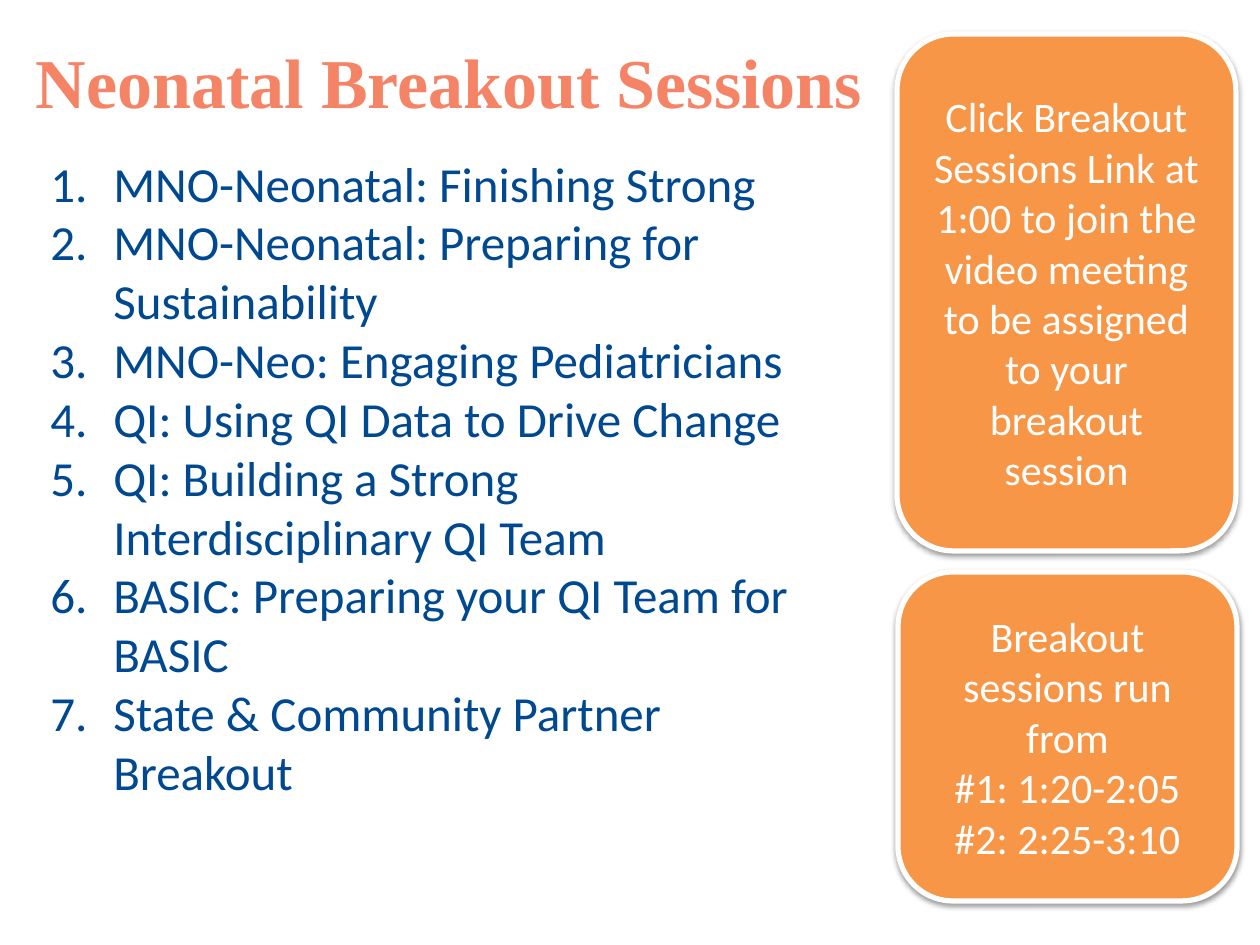
from dataclasses import dataclass

from lxml import etree
from pptx import Presentation
from pptx import util as u
from pptx.dml.color import RGBColor
from pptx.enum import shapes, text
from pptx.oxml.ns import qn

EMU_PER_PX = 914400 / 126
TITLE_ONLY = 5


@dataclass(frozen=True)
class Theme:
    heading_font: str = "Times New Roman"
    body_font: str = "Calibri"
    coral: str = "F58466"
    navy: str = "004990"
    orange: str = "F79646"
    white: str = "FFFFFF"
    shadow: str = "000000"
    title_size: int = 40
    list_size: int = 28
    card_size: int = 24


THEME = Theme()

SESSIONS = [
    "MNO-Neonatal: Finishing Strong",
    "MNO-Neonatal: Preparing for Sustainability",
    "MNO-Neo: Engaging Pediatricians",
    "QI: Using QI Data to Drive Change",
    "QI: Building a Strong Interdisciplinary QI Team",
    "BASIC: Preparing your QI Team for BASIC",
    "State & Community Partner Breakout",
]
JOINING = ["Click Breakout Sessions Link at 1:00 to join the video meeting "
           "to be assigned to your breakout session"]
TIMES = ["Breakout sessions run from", "#1: 1:20-2:05", "#2: 2:25-3:10"]


def px(length):
    return u.Emu(round(length * EMU_PER_PX))


def add_xml(parent, tag, **attributes):
    return etree.SubElement(parent, qn(tag), attributes)


def style(paragraph, font, size, color, align, bold=False):
    paragraph.alignment = align
    paragraph.font.name = font
    paragraph.font.size = u.Pt(size)
    paragraph.font.bold = bold
    paragraph.font.color.rgb = RGBColor.from_string(color)


def number(paragraph, indent, color):
    """Give the paragraph an automatic number on a hanging indent."""
    properties = paragraph._p.get_or_add_pPr()
    properties.set("marL", str(indent))
    properties.set("indent", str(-indent))
    bullet_color = add_xml(properties, "a:buClr")
    add_xml(bullet_color, "a:srgbClr", val=color)
    add_xml(properties, "a:buFont", typeface="+mj-lt")
    add_xml(properties, "a:buAutoNum", type="arabicPeriod")


def add_shadow(card):
    card.shadow.inherit = False
    effects = card._element.spPr.find(qn("a:effectLst"))
    outer = add_xml(effects, "a:outerShdw", blurRad=str(u.Pt(3.1)),
                    dist=str(u.Pt(1.6)), dir="5400000", rotWithShape="0")
    color = add_xml(outer, "a:srgbClr", val=THEME.shadow)
    add_xml(color, "a:alpha", val="38000")


def place_title(slide, left, top, width, height):
    title = slide.shapes.title
    title.left, title.top = px(left), px(top)
    title.width, title.height = px(width), px(height)
    frame = title.text_frame
    frame.text = "Neonatal Breakout Sessions"
    frame.vertical_anchor = text.MSO_ANCHOR.TOP
    frame.auto_size = text.MSO_AUTO_SIZE.NONE
    style(frame.paragraphs[0], THEME.heading_font, THEME.title_size,
          THEME.coral, text.PP_ALIGN.LEFT, bold=True)


def add_sessions(slide, left, top, width, height):
    agenda = slide.shapes.add_textbox(px(left), px(top), px(width), px(height))
    frame = agenda.text_frame
    frame.word_wrap = True
    frame.auto_size = text.MSO_AUTO_SIZE.SHAPE_TO_FIT_TEXT
    frame.text = "\n".join(SESSIONS)
    for session in frame.paragraphs:
        number(session, px(63), THEME.navy)
        style(session, THEME.body_font, THEME.list_size, THEME.navy,
              text.PP_ALIGN.LEFT)


def add_card(slide, lines, left, top, width, height):
    card = slide.shapes.add_shape(shapes.MSO_SHAPE.ROUNDED_RECTANGLE,
                                  px(left), px(top), px(width), px(height))
    card.fill.solid()
    card.fill.fore_color.rgb = RGBColor.from_string(THEME.orange)
    card.line.color.rgb = RGBColor.from_string(THEME.white)
    card.line.width = u.Pt(3)
    add_shadow(card)
    frame = card.text_frame
    frame.word_wrap = True
    frame.vertical_anchor = text.MSO_ANCHOR.MIDDLE
    frame.text = "\n".join(lines)
    for line in frame.paragraphs:
        style(line, THEME.body_font, THEME.card_size, THEME.white,
              text.PP_ALIGN.CENTER)


def main():
    deck = Presentation()
    deck.slide_width, deck.slide_height = px(1260), px(945)
    slide = deck.slides.add_slide(deck.slide_layouts[TITLE_ONLY])

    # Heading and numbered sessions on the left
    place_title(slide, 23, 32, 977, 158)
    add_sessions(slide, 38, 147, 804, 665)

    # Joining instructions and times on the right
    add_card(slide, JOINING, 897, 34, 339, 517)
    add_card(slide, TIMES, 898, 572, 339, 329)

    deck.save("out.pptx")


if __name__ == "__main__":
    main()
